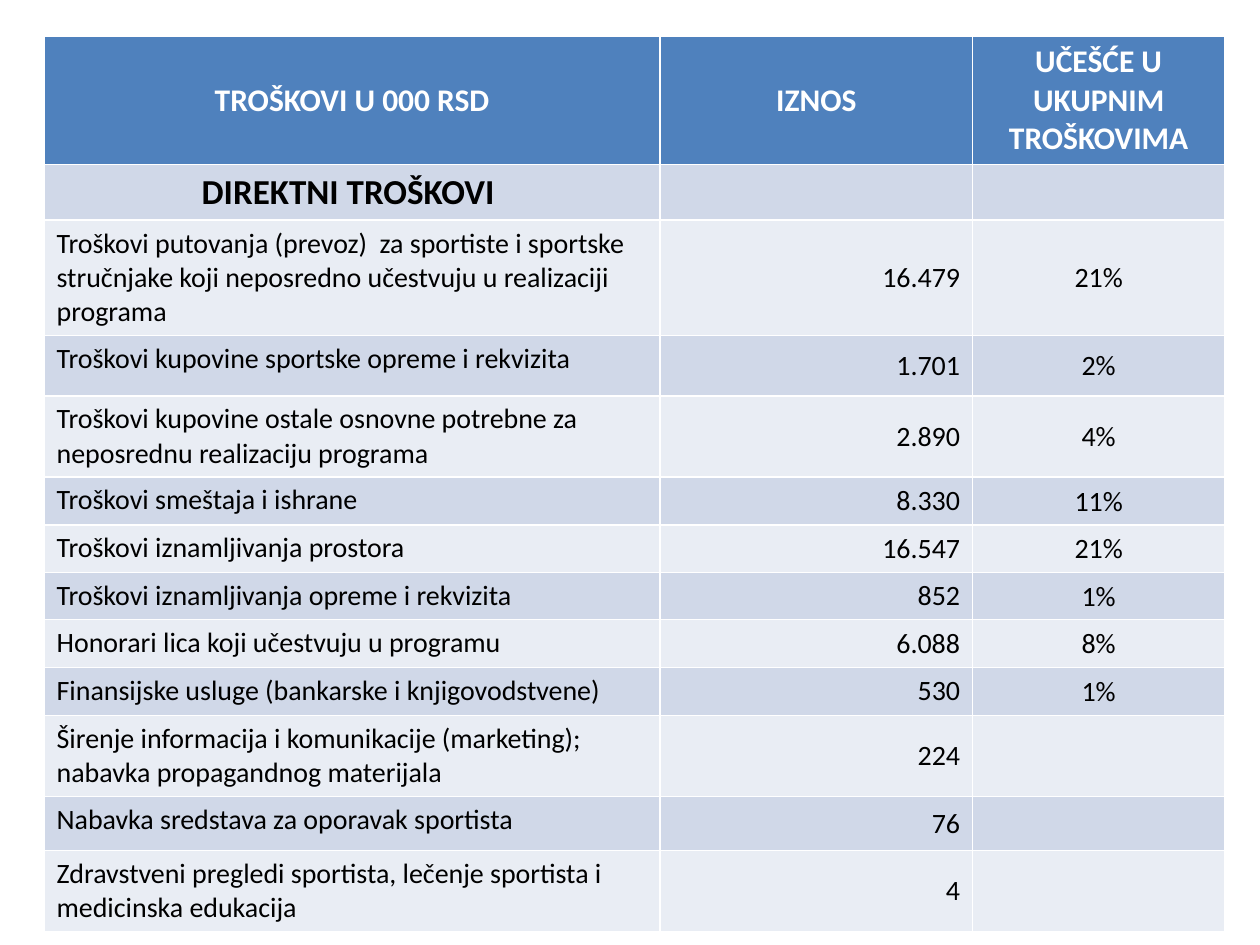
from pptx import Presentation
from pptx.dml.color import RGBColor
from pptx.enum.text import MSO_ANCHOR as Anchor, PP_ALIGN as Align
from pptx.util import Inches, Pt


def rgb(value):
    return RGBColor.from_string(value)


def write(cell, text, align, size, color="000000", bold=False):
    paragraph = cell.text_frame.paragraphs[0]
    paragraph.alignment = align
    run = paragraph.add_run()
    run.text = text
    formats = {"name": "Calibri", "size": Pt(size), "bold": bold}
    for attribute, value in formats.items():
        setattr(run.font, attribute, value)
    run.font.color.rgb = rgb(color)


HEADER_FILL = "4F81BD"
BAND_FILLS = ["E9EDF4", "D0D8E8"]
COLUMN_WIDTHS = [4.89, 2.48, 2]
HEADINGS = ["TROŠKOVI U 000 RSD", "IZNOS", "UČEŠĆE U UKUPNIM TROŠKOVIMA"]
SECTION = "DIREKTNI TROŠKOVI "
# Row height, cost, amount, share of total
COSTS = [
    (0.86, "Troškovi putovanja (prevoz)  za sportiste i sportske stručnjake "
           "koji neposredno učestvuju u realizaciji programa", "16.479", "21%"),
    (0.48, "Troškovi kupovine sportske opreme i rekvizita", "1.701", "2%"),
    (0.6, "Troškovi kupovine ostale osnovne potrebne za neposrednu "
          "realizaciju programa", "2.890", "4%"),
    (0.38, "Troškovi smeštaja i ishrane", "8.330", "11%"),
    (0.38, "Troškovi iznamljivanja prostora", "16.547", "21%"),
    (0.35, "Troškovi iznamljivanja opreme i rekvizita", "852", "1%"),
    (0.38, "Honorari lica koji učestvuju u programu", "6.088", "8%"),
    (0.38, "Finansijske usluge (bankarske i knjigovodstvene)", "530", "1%"),
    (0.6, "Širenje informacija i komunikacije (marketing); "
          "nabavka propagandnog materijala", "224", ""),
    (0.43, "Nabavka sredstava za oporavak sportista", "76", ""),
    (0.59, "Zdravstveni pregledi sportista, lečenje sportista i "
           "medicinska edukacija", "4", ""),
]
SHARE_MARGINS = {
    "margin_left": Inches(0.01),
    "margin_top": Inches(0.01),
    "margin_right": Inches(0.01),
    "margin_bottom": Inches(0),
}

prs = Presentation()
prs.slide_width, prs.slide_height = Inches(10), Inches(7.5)
slide = prs.slides.add_slide(prs.slide_layouts[6])

row_heights = [0.95, 0.41] + [cost[0] for cost in COSTS]
costs_table = slide.shapes.add_table(
    len(row_heights), len(COLUMN_WIDTHS), Inches(0.35), Inches(0.29),
    Inches(sum(COLUMN_WIDTHS)), Inches(sum(row_heights))).table

for column, width in zip(costs_table.columns, COLUMN_WIDTHS):
    column.width = Inches(width)
for index, (row, height) in enumerate(zip(costs_table.rows, row_heights)):
    row.height = Inches(height)
    for cell in row.cells:
        cell.fill.solid()
        cell.fill.fore_color.rgb = rgb(BAND_FILLS[index % 2] if index else HEADER_FILL)

for cell, heading in zip(costs_table.rows[0].cells, HEADINGS):
    cell.vertical_anchor = Anchor.MIDDLE
    write(cell, heading, Align.CENTER, 18, "FFFFFF", True)

write(costs_table.cell(1, 0), SECTION, Align.CENTER, 20, bold=True)

for index, (height, cost, amount, share) in enumerate(COSTS, start=2):
    cost_cell, amount_cell, share_cell = costs_table.rows[index].cells
    write(cost_cell, cost, Align.LEFT, 16)
    amount_cell.vertical_anchor = Anchor.MIDDLE
    write(amount_cell, amount, Align.RIGHT, 16)
    if share:
        share_cell.vertical_anchor = Anchor.MIDDLE
        for attribute, value in SHARE_MARGINS.items():
            setattr(share_cell, attribute, value)
        write(share_cell, share, Align.CENTER, 16)

prs.save("out.pptx")
